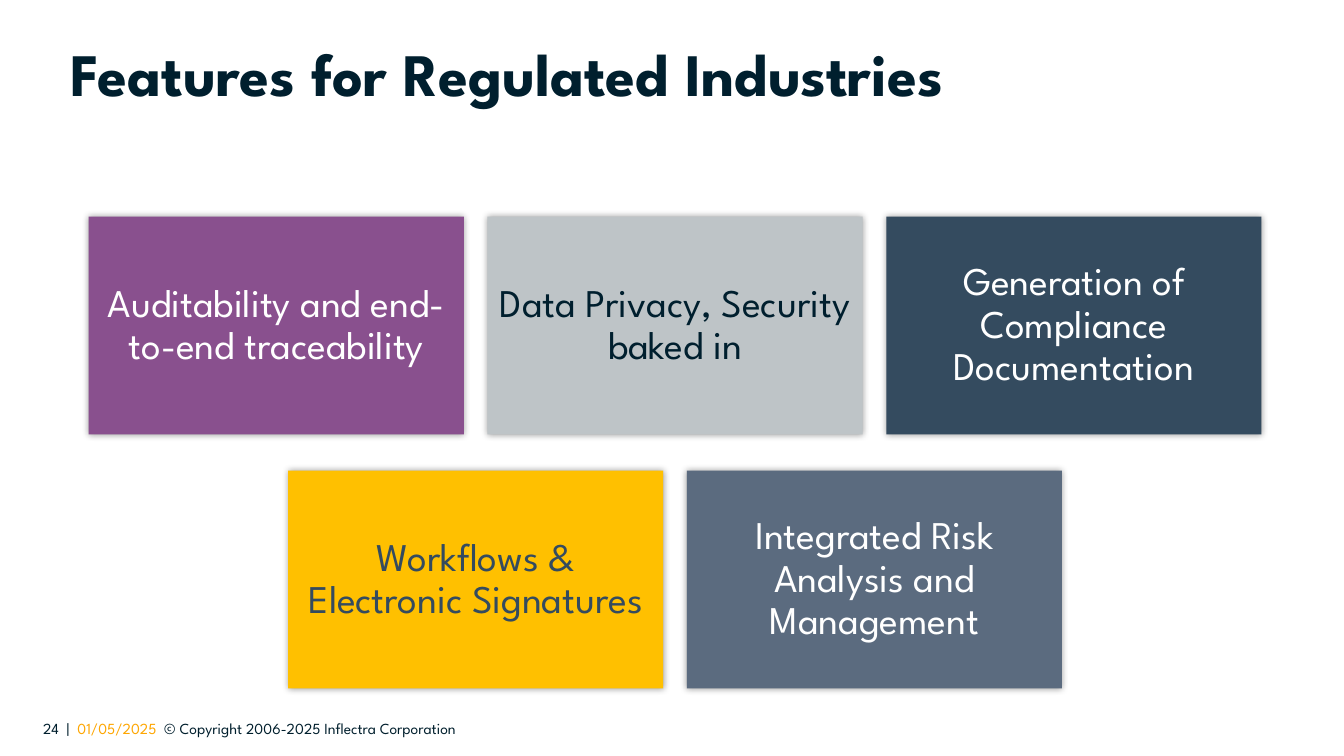
from lxml import etree
from pptx import Presentation
from pptx.dml.color import RGBColor
from pptx.enum.shapes import MSO_SHAPE
from pptx.enum.text import MSO_ANCHOR, PP_ALIGN
from pptx.oxml.ns import qn
from pptx.util import Inches, Pt

RECT = MSO_SHAPE.RECTANGLE
MIDDLE = MSO_ANCHOR.MIDDLE
LEFT, CENTER = PP_ALIGN.LEFT, PP_ALIGN.CENTER

NAVY = RGBColor(0x00, 0x1F, 0x2E)
FOOTER_NAVY = RGBColor(0x00, 0x1F, 0x2D)
ORANGE = RGBColor(0xFE, 0xA6, 0x01)
WHITE = RGBColor(0xFF, 0xFF, 0xFF)
PURPLE = RGBColor(0x89, 0x50, 0x8E)
SILVER = RGBColor(0xBE, 0xC4, 0xC7)
SLATE = RGBColor(0x34, 0x4B, 0x5F)
AMBER = RGBColor(0xFF, 0xC0, 0x00)
STEEL = RGBColor(0x5B, 0x6B, 0x7F)

FONT = "League Spartan"
TITLE = "Features for Regulated Industries"
FOOTER = [
    ("24  |  ", FOOTER_NAVY),
    ("01/05/2025", ORANGE),
    ("  © Copyright 2006-2025 Inflectra Corporation", FOOTER_NAVY),
]
ROWS = [
    [
        ("Auditability and end-to-end traceability", PURPLE, WHITE),
        ("Data Privacy, Security\nbaked in", SILVER, NAVY),
        ("Generation of Compliance Documentation", SLATE, WHITE),
    ],
    [
        ("Workflows & Electronic Signatures", AMBER, SLATE),
        ("Integrated Risk Analysis and Management", STEEL, WHITE),
    ],
]

CARD_W, CARD_H = 3.72, 2.16
STEP_X, STEP_Y = 3.955, 2.52
CENTER_X, TOP = 6.695, 2.15


def style_run(r, size, color, bold=False):
    values = {"name": FONT, "size": Pt(size), "bold": bold}
    for name, value in values.items():
        setattr(r.font, name, value)
    r.font.color.rgb = color


def style_frame(tf, inset_x, inset_y):
    values = {
        "word_wrap": True,
        "margin_left": Inches(inset_x),
        "margin_right": Inches(inset_x),
        "margin_top": Inches(inset_y),
        "margin_bottom": Inches(inset_y),
    }
    for name, value in values.items():
        setattr(tf, name, value)


def write(tf, text, size, color, align, bold=False):
    tf.vertical_anchor = MIDDLE
    p = tf.paragraphs[0]
    p.text = text
    p.alignment = align
    p.line_spacing = 0.9
    for r in p.runs:
        style_run(r, size, color, bold)


def add_glow_shadow(sp):
    sp.shadow.inherit = False
    effects = sp._element.spPr.find(qn("a:effectLst"))
    shadow = etree.SubElement(effects, qn("a:outerShdw"), blurRad=str(Pt(5)),
                              dist="0", dir="0", algn="ctr", rotWithShape="0")
    color = etree.SubElement(shadow, qn("a:srgbClr"), val="000000")
    etree.SubElement(color, qn("a:alpha"), val="40000")


def add_card(s, x, y, text, fill, color):
    sp = s.shapes.add_shape(RECT, Inches(x), Inches(y), Inches(CARD_W), Inches(CARD_H))
    sp.fill.solid()
    sp.fill.fore_color.rgb = fill
    sp.line.fill.background()
    add_glow_shadow(sp)
    style_frame(sp.text_frame, 0.12, 0.12)
    write(sp.text_frame, text, 28, color, CENTER)


def main():
    prs = Presentation()
    prs.slide_width, prs.slide_height = Inches(13.33), Inches(7.5)
    s = prs.slides.add_slide(prs.slide_layouts[5])

    title = s.shapes.title
    title.left, title.top = Inches(0.6), Inches(0.34)
    title.width, title.height = Inches(11.5), Inches(0.84)
    style_frame(title.text_frame, 0.1, 0.05)
    write(title.text_frame, TITLE, 43, NAVY, LEFT, True)

    for row, cards in enumerate(ROWS):
        left = CENTER_X - ((len(cards) - 1) * STEP_X + CARD_W) / 2
        for col, card in enumerate(cards):
            add_card(s, left + col * STEP_X, TOP + row * STEP_Y, *card)

    footer = s.shapes.add_textbox(Inches(0.33), Inches(7.08), Inches(6.67), Inches(0.29))
    style_frame(footer.text_frame, 0.1, 0.05)
    p = footer.text_frame.paragraphs[0]
    for text, color in FOOTER:
        r = p.add_run()
        r.text = text
        style_run(r, 11, color)

    prs.save("out.pptx")


if __name__ == "__main__":
    main()
